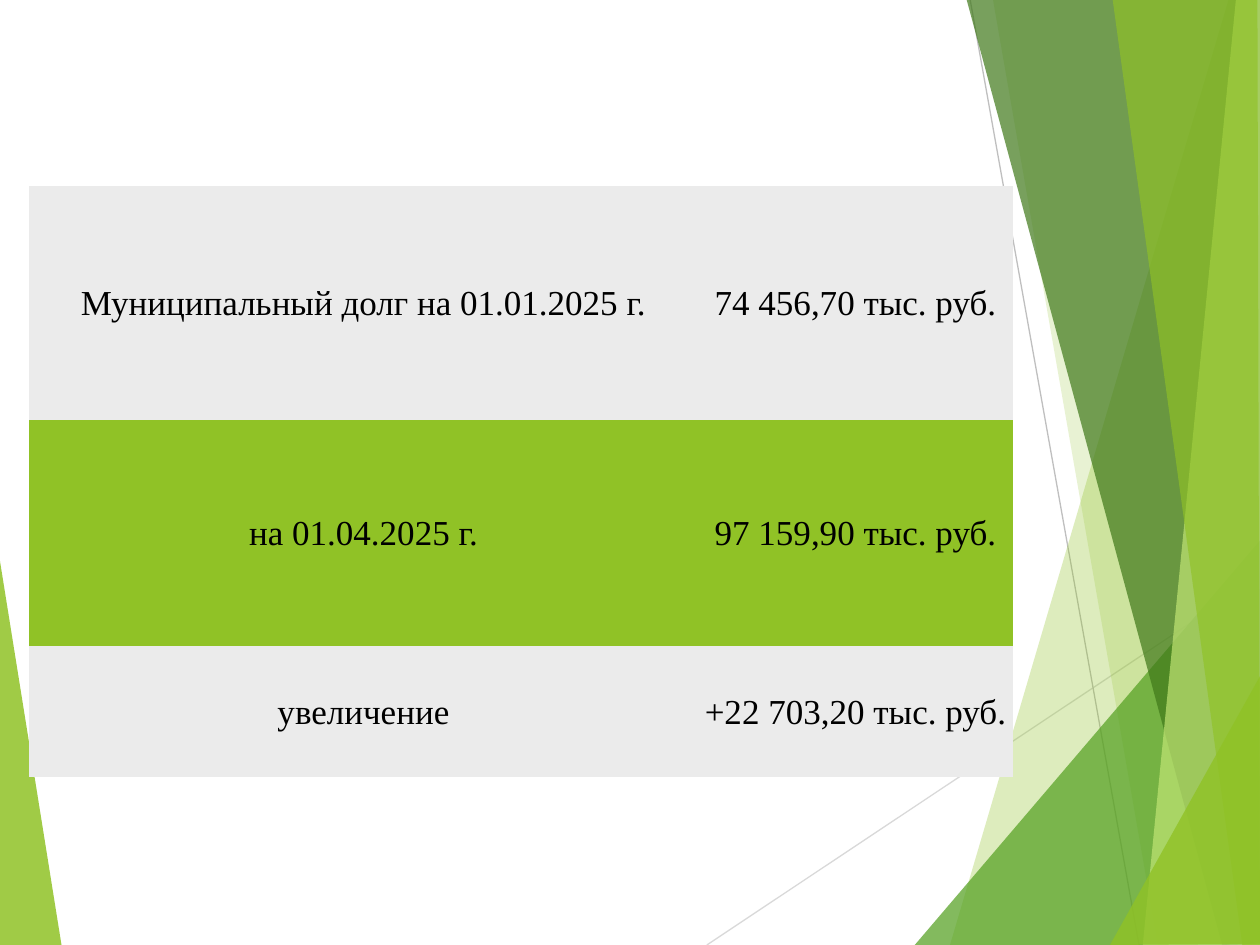
from pptx import Presentation
from pptx.dml.color import RGBColor
from pptx.enum.shapes import MSO_CONNECTOR as Link
from pptx.enum.text import MSO_ANCHOR as Anchor, PP_ALIGN as Align
from pptx.oxml.ns import qn
from pptx.util import Inches, Pt
from lxml.etree import SubElement

LIME = RGBColor(0x90, 0xC2, 0x26)
GREEN = RGBColor(0x54, 0xA0, 0x21)
DARK = RGBColor(0x3F, 0x78, 0x19)
PALE = RGBColor(0xC0, 0xE4, 0x74)
GRAY = RGBColor(0xEB, 0xEB, 0xEB)
SILVER = RGBColor(0xD9, 0xD9, 0xD9)
STEEL = RGBColor(0xBF, 0xBF, 0xBF)
BLACK = RGBColor(0, 0, 0)
PLAIN = "{2D5ABB26-0587-4C30-8999-92F81FD0307C}"

ROWS = [
    ("Муниципальный долг на 01.01.2025 г.", "74 456,70 тыс. руб."),
    ("на 01.04.2025 г.", "97 159,90 тыс. руб."),
    ("увеличение", "+22 703,20 тыс. руб."),
]
TALL = [1.85, 1.8, 1.04]
WIDE = [5.31, 2.5]

FACETS = [
    (LIME, 30, [(2.21, 0.01), (0, 7.51), (2.47, 7.51), (2.47, 0.01)], 7.54),
    (LIME, 20, [(0, 0), (1.31, 7.51), (2.13, 7.51), (2.13, 0)], 7.88),
    (GREEN, 72, [(0, 7.51), (2.74, 4.3), (2.75, 7.51)], 7.26),
    (DARK, 70, [(0, 0), (2.03, 7.51), (2.34, 7.5), (2.34, 0)], 7.67),
    (PALE, 70, [(0.74, 0), (0, 7.51), (0.94, 7.51), (0.93, 0)], 9.07),
    (LIME, 65, [(0, 0), (1.03, 7.51), (1.17, 7.51), (1.15, 0)], 8.83),
    (LIME, 80, [(0, 7.51), (1.2, 5.36), (1.2, 7.5)], 8.81),
]


def facet(slide, left, top, color, alpha, spots):
    marks = [(Inches(left + x), Inches(top + y)) for x, y in spots]
    pen = slide.shapes.build_freeform(*marks[0])
    pen.add_line_segments(marks[1:], close=True)
    shape = pen.convert_to_shape()
    shape.shadow.inherit = False
    shape.line.fill.background()
    shape.fill.solid()
    shape.fill.fore_color.rgb = color
    tint = shape.fill._xPr.find(qn("a:solidFill"))[0]
    SubElement(tint, qn("a:alpha"), val=str(alpha * 1000))


def ray(slide, left, top, start, end, color):
    line = slide.shapes.add_connector(
        Link.STRAIGHT,
        Inches(left + start[0]), Inches(top + start[1]),
        Inches(left + end[0]), Inches(top + end[1]))
    line.line.color.rgb = color
    line.line.width = Pt(0.75)
    SubElement(line._element.spPr, qn("a:effectLst"))


def backdrop(slide, left, top):
    facet(slide, left - 0.01, top + 4.39, LIME, 85,
          [(0, 0), (0.5, 3.12), (0, 3.11)])
    ray(slide, left, top, (5.61, 7.5), (10.01, 4.57), SILVER)
    ray(slide, left, top, (7.7, 0), (9.04, 7.5), STEEL)
    for color, alpha, spots, shift in FACETS:
        facet(slide, left + shift, top - 0.01, color, alpha, spots)


def fill_cell(cell, text, color):
    cell.fill.solid()
    cell.fill.fore_color.rgb = color
    cell.vertical_anchor = Anchor.MIDDLE
    cell.margin_left = cell.margin_right = cell.margin_top = Inches(0.01)
    cell.margin_bottom = 0
    cell.text = text
    para = cell.text_frame.paragraphs[0]
    para.alignment = Align.CENTER
    para.font.name = "Times New Roman"
    para.font.size = Pt(20)
    para.font.color.rgb = BLACK


def debt_table(slide, left, top, width, height):
    frame = slide.shapes.add_table(
        len(ROWS), len(WIDE),
        Inches(left), Inches(top), Inches(width), Inches(height))
    table = frame.table
    table.first_row = False
    table.horz_banding = False
    table._tbl.tblPr.find(qn("a:tableStyleId")).text = PLAIN
    for col, size in zip(table.columns, WIDE):
        col.width = Inches(width * size / sum(WIDE))
    for i, (row, size) in enumerate(zip(table.rows, TALL)):
        row.height = Inches(height * size / sum(TALL))
        for cell, text in zip(row.cells, ROWS[i]):
            fill_cell(cell, text, LIME if i % 2 else GRAY)


def main():
    deck = Presentation()
    deck.slide_width = Inches(10)
    deck.slide_height = Inches(7.5)
    slide = deck.slides.add_slide(deck.slide_layouts[6])
    backdrop(slide, 0, 0)
    debt_table(slide, 0.23, 1.48, 7.81, 4.69)
    deck.save("out.pptx")


if __name__ == "__main__":
    main()
